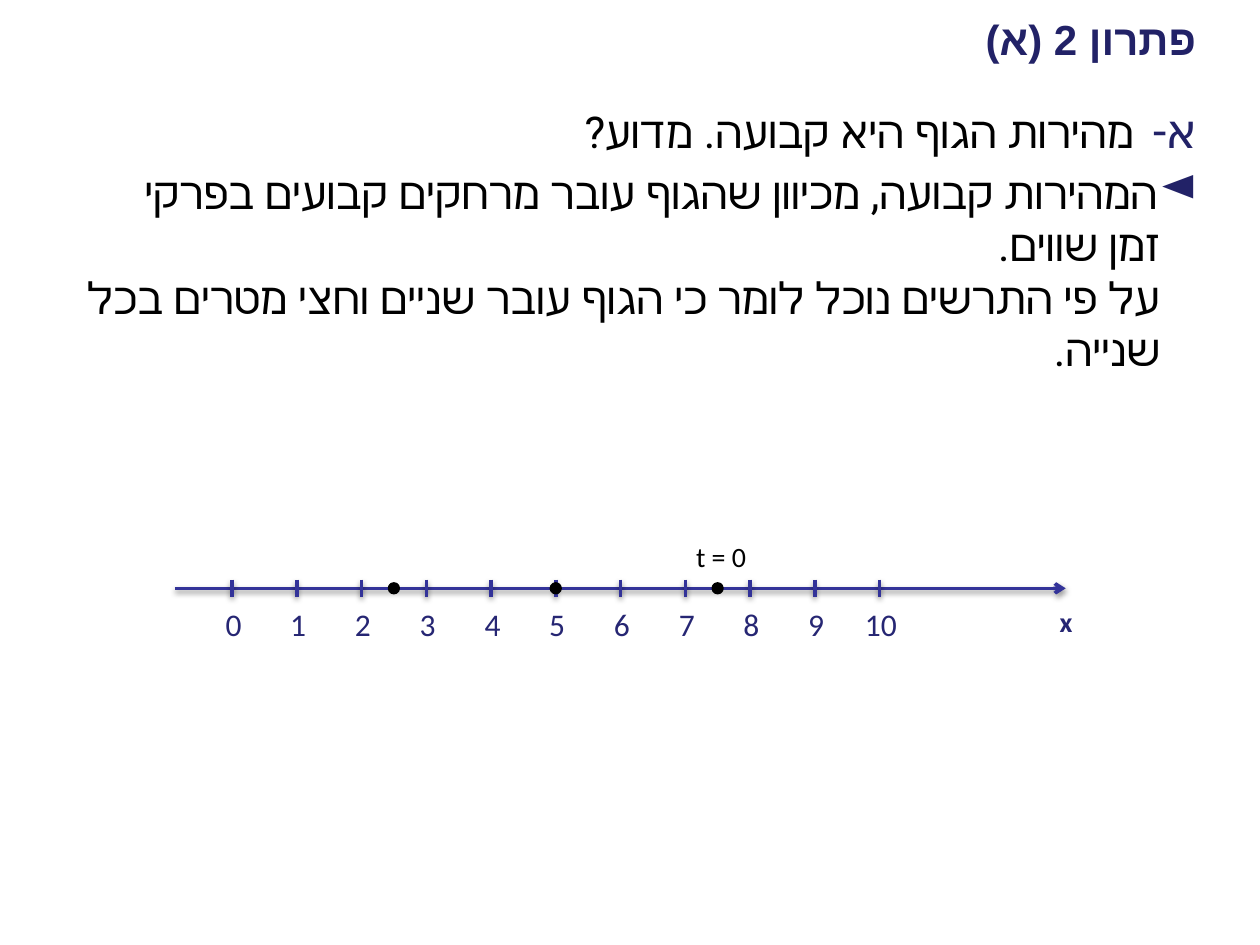
from lxml import etree
from pptx import Presentation
from pptx.dml.color import RGBColor
from pptx.enum.shapes import MSO_CONNECTOR, MSO_SHAPE
from pptx.enum.text import MSO_ANCHOR, MSO_AUTO_SIZE, PP_ALIGN
from pptx.oxml import parse_xml
from pptx.oxml.ns import qn
from pptx.util import Pt

LINE, OVAL = MSO_CONNECTOR.STRAIGHT, MSO_SHAPE.OVAL
MIDDLE, GROW = MSO_ANCHOR.MIDDLE, MSO_AUTO_SIZE.SHAPE_TO_FIT_TEXT
NONE = MSO_AUTO_SIZE.NONE
RIGHT, CENTER = PP_ALIGN.RIGHT, PP_ALIGN.CENTER

NAVY = RGBColor(0x22, 0x22, 0x67)
INK = RGBColor(0x26, 0x26, 0x73)
BLUE = RGBColor(0x33, 0x33, 0x99)
BLACK = RGBColor(0, 0, 0)
NS = 'xmlns:a="http://schemas.openxmlformats.org/drawingml/2006/main"'
SHADOW = (f'<a:effectLst {NS}><a:outerShdw blurRad="{Pt(3.1)}" dist="{Pt(1.6)}" '
          'dir="5400000" rotWithShape="0"><a:srgbClr val="000000">'
          '<a:alpha val="38000"/></a:srgbClr></a:outerShdw></a:effectLst>')


def write(para, text, size=18, font="Calibri", color=INK, bold=False,
          align=RIGHT, rtl=True):
    para.text = text
    para.alignment = align
    if rtl:
        para._p.get_or_add_pPr().set("rtl", "1")
    for run in para.runs:
        run.font.size, run.font.name, run.font.bold = Pt(size), font, bold
        run.font.color.rgb = color
        face = etree.SubElement(run._r.get_or_add_rPr(), qn("a:cs"))
        face.set("typeface", font)


def draw(group, x1, y1, x2, y2):
    line = group.shapes.add_connector(LINE, Pt(x1), Pt(y1), Pt(x2), Pt(y2))
    line.line.color.rgb = BLUE
    line.line.width = Pt(2)
    line._element.spPr.append(parse_xml(SHADOW))
    return line


deck = Presentation()
deck.slide_width, deck.slide_height = Pt(720), Pt(540)
slide = deck.slides.add_slide(deck.slide_layouts[5])

# Title
title = slide.shapes.title
title.left, title.top, title.width, title.height = Pt(85.7), Pt(8), Pt(605), Pt(28)
title.text_frame.vertical_anchor = MIDDLE
title.text_frame.auto_size = NONE
write(title.text_frame.paragraphs[0], "פתרון 2 (א)", size=24, font="Arial",
      color=NAVY, bold=True)

# Question and answer
body = slide.shapes.add_textbox(Pt(42.5), Pt(56.2), Pt(648.7), Pt(360)).text_frame
body.word_wrap = True
items = [
    ("מהירות הגוף היא קבועה. מדוע?", 36, '<a:buAutoNum {} type="hebrew2Minus"/>'),
    ("המהירות קבועה, מכיוון שהגוף עובר מרחקים קבועים בפרקי זמן שווים.\v"
     "על פי התרשים נוכל לומר כי הגוף עובר שניים וחצי מטרים בכל שנייה.",
     21, '<a:buChar {} char="◄"/>'),
]
for i, (text, indent, mark) in enumerate(items):
    para = body.add_paragraph() if i else body.paragraphs[0]
    write(para, text, size=25, font="Roboto", color=BLACK)
    para.space_before = Pt(5)
    props = para._p.get_or_add_pPr()
    props.set("marL", str(Pt(indent)))
    props.set("indent", str(-Pt(indent)))
    for part in (f'<a:buClr {NS}><a:srgbClr val="{NAVY}"/></a:buClr>',
                 f'<a:buSzPct {NS} val="110000"/>', mark.format(NS)):
        props.append(parse_xml(part))

# Number line
ZERO, STEP, AXIS = 132.6, 37, 336.2
group = slide.shapes.add_group_shape()
arrow = draw(group, 100, AXIS, 609, AXIS)
tail = etree.SubElement(arrow.line._get_or_add_ln(), qn("a:tailEnd"))
tail.set("type", "arrow")

# Ticks and their numbers
for n in range(11):
    x = ZERO + n * STEP
    draw(group, x, AXIS - 5, x, AXIS + 5)
    wide = 42 if n == 10 else 32.4
    box = group.shapes.add_textbox(Pt(x + 0.8 - wide / 2), Pt(342), Pt(wide), Pt(29))
    box.text_frame.word_wrap = True
    box.text_frame.auto_size = GROW
    write(box.text_frame.paragraphs[0], str(n), align=CENTER, rtl=False)

# Positions of the body
DOT = 5
for value in (2.5, 5, 7.5):
    x = ZERO + value * STEP
    dot = group.shapes.add_shape(OVAL, Pt(x - DOT / 2), Pt(AXIS - DOT / 2),
                                 Pt(DOT), Pt(DOT))
    dot.shadow.inherit = False
    dot.fill.solid()
    dot.fill.fore_color.rgb = BLACK
    dot.line.color.rgb = BLACK
    dot.line.width = Pt(2)

# Time and axis labels
for text, x, y, wide, color, bold in (("t = 0", 389.5, 304.6, 44, BLACK, False),
                                      ("x", 597.6, 342, 22.3, INK, True)):
    box = group.shapes.add_textbox(Pt(x), Pt(y), Pt(wide), Pt(26.6))
    box.text_frame.word_wrap = False
    box.text_frame.auto_size = GROW
    write(box.text_frame.paragraphs[0], text, size=16, color=color, bold=bold)

deck.save("out.pptx")
